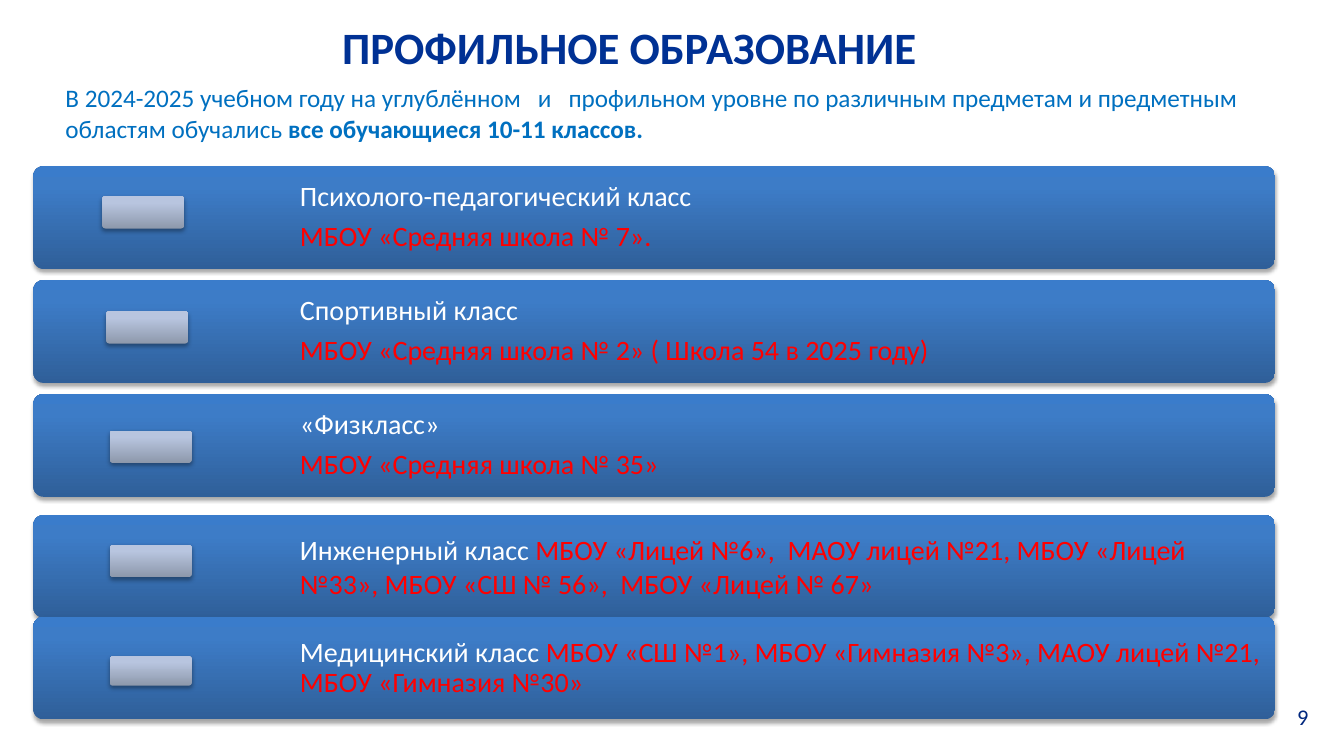
from pptx import Presentation
from pptx.dml.color import RGBColor
from pptx.enum.shapes import MSO_SHAPE
from pptx.enum.text import MSO_ANCHOR, PP_ALIGN
from pptx.oxml import parse_xml
from pptx.oxml.ns import nsdecls
from pptx.util import Cm, Pt

NAVY = RGBColor(0x00, 0x31, 0x94)
NUMBER_BLUE = RGBColor(0x00, 0x27, 0x7E)
TEXT_BLUE = RGBColor(0x00, 0x70, 0xC0)
WHITE = RGBColor(0xFF, 0xFF, 0xFF)
RED = RGBColor(0xFF, 0x00, 0x00)
BAND_STOPS = [(0, RGBColor(0x2F, 0x5F, 0x99)), (80, RGBColor(0x3D, 0x7C, 0xC7)),
              (100, RGBColor(0x3A, 0x7C, 0xCB))]
BADGE_STOPS = [(0, RGBColor(0x8D, 0x98, 0xAB)), (80, RGBColor(0xB8, 0xC5, 0xDF)),
               (100, RGBColor(0xB8, 0xC6, 0xE0))]

BAND_LEFT, BAND_WIDTH, BAND_HEIGHT = Cm(0.84), Cm(31.29), Cm(2.59)
LABEL_LEFT, LABEL_WIDTH = Cm(7.36), Cm(24.77)
BADGE_WIDTH = Cm(2.06)

# Band top, badge left, top and height (cm), line spacing, space after (pt),
# class name, schools, whether the schools start a new paragraph
CLASSES = [
    (4.19, 2.58, 4.94, 0.82, 0.9, 7,
     "Психолого-педагогический класс", "МБОУ «Средняя школа № 7».", True),
    (7.06, 2.68, 7.84, 0.82, 0.9, 7,
     "Спортивный класс", "МБОУ «Средняя школа № 2» ( Школа 54 в 2025 году)", True),
    (9.93, 2.77, 10.85, 0.82, 0.9, 7,
     "«Физкласс»", "МБОУ «Средняя школа № 35»", True),
    (12.98, 2.77, 13.73, 0.82, 1.0, 0, "Инженерный класс ",
     "МБОУ «Лицей №6»,  МАОУ лицей №21, МБОУ «Лицей №33», "
     "МБОУ «СШ № 56»,  МБОУ «Лицей № 67»", False),
    (15.54, 2.77, 16.54, 0.74, 0.9, 7, "Медицинский класс ",
     "МБОУ «СШ №1», МБОУ «Гимназия №3», МАОУ лицей №21, МБОУ «Гимназия №30»", False),
]


def add_glossy_box(left, top, width, height, stops):
    """Add a rounded box with a vertical gradient and a soft shadow below."""
    box = slide.shapes.add_shape(MSO_SHAPE.ROUNDED_RECTANGLE, left, top, width, height)
    box.adjustments[0] = 0.1
    box.line.fill.background()
    stop_xml = "".join(
        f'<a:gs pos="{position * 1000}"><a:srgbClr val="{color}"/></a:gs>'
        for position, color in stops)
    properties = box.element.spPr
    properties.find("{*}ln").addprevious(parse_xml(
        f'<a:gradFill {nsdecls("a")} rotWithShape="1"><a:gsLst>{stop_xml}</a:gsLst>'
        '<a:lin ang="16200000" scaled="0"/></a:gradFill>'))
    properties.append(parse_xml(
        f'<a:effectLst {nsdecls("a")}><a:outerShdw blurRad="40000" dist="23000" '
        'dir="5400000" rotWithShape="0"><a:srgbClr val="000000">'
        '<a:alpha val="35000"/></a:srgbClr></a:outerShdw></a:effectLst>'))


def add_run(paragraph, text, size, color, bold=False):
    run = paragraph.add_run()
    run.text = text
    run.font.name = "Calibri"
    run.font.size = Pt(size)
    run.font.bold = bold
    run.font.color.rgb = color


presentation = Presentation()
presentation.slide_width = Cm(33.87)
presentation.slide_height = Cm(19.05)
slide = presentation.slides.add_slide(presentation.slide_layouts[5])

title = slide.shapes.title
title.left, title.top, title.width, title.height = Cm(2.34), Cm(0.66), Cm(27.05), Cm(1.22)
title_frame = title.text_frame
title_frame.margin_left = title_frame.margin_right = title_frame.margin_bottom = 0
title_frame.margin_top = Cm(0.03)
title_frame.vertical_anchor = MSO_ANCHOR.TOP
title_paragraph = title_frame.paragraphs[0]
title_paragraph.alignment = PP_ALIGN.CENTER
title_paragraph.line_spacing = Pt(33.2)
add_run(title_paragraph, "ПРОФИЛЬНОЕ ОБРАЗОВАНИЕ", 32, NAVY, bold=True)

intro = slide.shapes.add_textbox(Cm(1.4), Cm(1.96), Cm(31.57), Cm(1.8))
intro.text_frame.word_wrap = True
intro_paragraph = intro.text_frame.paragraphs[0]
add_run(intro_paragraph,
        "В 2024-2025 учебном году на углублённом   и   профильном уровне по различным "
        "предметам и предметным областям обучались ", 18, TEXT_BLUE)
add_run(intro_paragraph, "все обучающиеся 10-11 классов.", 18, TEXT_BLUE, bold=True)

for (band_top, badge_left, badge_top, badge_height, spacing, space_after,
     class_name, schools, schools_below) in CLASSES:
    add_glossy_box(BAND_LEFT, Cm(band_top), BAND_WIDTH, BAND_HEIGHT, BAND_STOPS)
    add_glossy_box(Cm(badge_left), Cm(badge_top), BADGE_WIDTH, Cm(badge_height), BADGE_STOPS)

    label = slide.shapes.add_textbox(LABEL_LEFT, Cm(band_top), LABEL_WIDTH, BAND_HEIGHT)
    frame = label.text_frame
    frame.word_wrap = True
    frame.vertical_anchor = MSO_ANCHOR.MIDDLE
    frame.margin_left = frame.margin_right = Cm(0.2)
    frame.margin_top = frame.margin_bottom = Cm(0.2)
    name_paragraph = frame.paragraphs[0]
    schools_paragraph = frame.add_paragraph() if schools_below else name_paragraph
    add_run(name_paragraph, class_name, 20, WHITE)
    add_run(schools_paragraph, schools, 20, RED)
    for paragraph in frame.paragraphs:
        paragraph.line_spacing = spacing
        paragraph.space_after = Pt(space_after)

number = slide.shapes.add_textbox(Cm(32.59), Cm(17.83), Cm(0.81), Cm(0.64))
number_frame = number.text_frame
number_frame.word_wrap = True
number_frame.margin_left = Cm(0.1)
number_frame.margin_right = number_frame.margin_top = number_frame.margin_bottom = 0
number_paragraph = number_frame.paragraphs[0]
number_paragraph.line_spacing = Pt(16.2)
add_run(number_paragraph, "9", 16, NUMBER_BLUE)

presentation.save("out.pptx")
